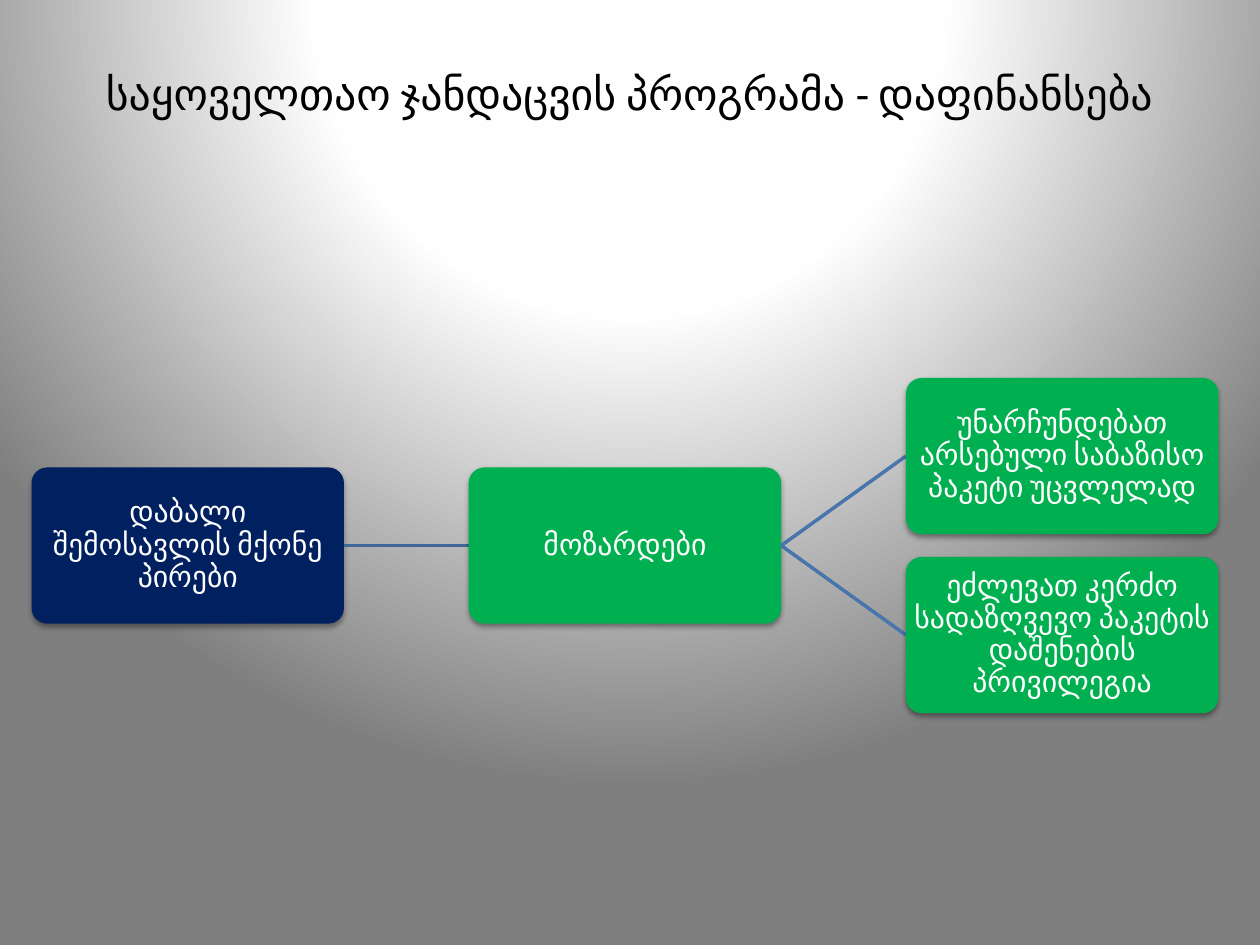
"""Build the slide on how the universal health programme is funded."""
from dataclasses import dataclass

from pptx import Presentation
from pptx.dml.color import RGBColor
from pptx.enum.shapes import MSO_CONNECTOR as Link, MSO_SHAPE as Preset
from pptx.enum.text import MSO_ANCHOR as Anchor, PP_ALIGN as Align
from pptx.oxml import parse_xml
from pptx.oxml.ns import nsdecls
from pptx.util import Inches, Pt

BLACK = RGBColor(0x00, 0x00, 0x00)
WHITE = RGBColor(0xFF, 0xFF, 0xFF)
NAVY = RGBColor(0x00, 0x20, 0x60)
GREEN = RGBColor(0x00, 0xB0, 0x50)
TRUNK_BLUE = RGBColor(0x3F, 0x67, 0x97)
BRANCH_BLUE = RGBColor(0x48, 0x75, 0xAC)
GLOW_STOPS = ((0, RGBColor(0xFF, 0xFF, 0xFF)),
              (40, RGBColor(0xFE, 0xFE, 0xFE)),
              (100, RGBColor(0x7F, 0x7F, 0x7F)))

BOX_WIDTH, BOX_HEIGHT = 2.48, 1.24
FIRST_LEFT, COLUMN_STEP = 0.25, 3.47
MIDDLE, BRANCH_OFFSET = 4.33, 0.71
BOX_MARGIN = Inches(0.01)
BOX_FRAME = {"word_wrap": True, "vertical_anchor": Anchor.MIDDLE,
             "margin_left": BOX_MARGIN, "margin_right": BOX_MARGIN,
             "margin_top": BOX_MARGIN, "margin_bottom": BOX_MARGIN}
TITLE_FRAME = {"word_wrap": True, "vertical_anchor": Anchor.MIDDLE}
BOX_PARA = {"alignment": Align.CENTER, "line_spacing": 0.9}
TITLE_PARA = {"alignment": Align.CENTER}


@dataclass(frozen=True)
class Node:
    """A rounded box of the tree, placed by column and vertical centre."""
    text: str
    column: int
    center: float
    fill: RGBColor
    shadow_alpha: int = 38
    shadow_distance: float = 1.6

    @property
    def left(self) -> float:
        return FIRST_LEFT + self.column * COLUMN_STEP

    @property
    def right(self) -> float:
        return self.left + BOX_WIDTH


def apply(target, values: dict) -> None:
    """Set every named attribute on the target."""
    for name, value in values.items():
        setattr(target, name, value)


def write(frame, text: str, size: float, color: RGBColor,
          frame_format: dict, para_format: dict) -> None:
    """Fill a text frame with one formatted paragraph."""
    apply(frame, frame_format)
    para = frame.paragraphs[0]
    apply(para, para_format)
    span = para.add_run()
    span.text = text
    apply(span.font, {"name": "Calibri", "size": Pt(size)})
    span.font.color.rgb = color


def paint_background(page) -> None:
    """Give the page a circular glow centred above its top edge."""
    stops = "".join(f'<a:gs pos="{place * 1000}"><a:srgbClr val="{color}"/></a:gs>'
                    for place, color in GLOW_STOPS)
    page.element.cSld.insert(0, parse_xml(
        f'<p:bg {nsdecls("p", "a")}><p:bgPr><a:gradFill rotWithShape="1">'
        f'<a:gsLst>{stops}</a:gsLst><a:path path="circle">'
        '<a:fillToRect l="50000" t="-80000" r="50000" b="180000"/></a:path>'
        '</a:gradFill><a:effectLst/></p:bgPr></p:bg>'))


def draw_title(page, text: str) -> None:
    """Write the centred heading."""
    box = page.shapes.add_textbox(Inches(0.5), Inches(0.3), Inches(9), Inches(0.87))
    write(box.text_frame, text, 25, BLACK, TITLE_FRAME, TITLE_PARA)


def draw_node(page, node: Node) -> None:
    """Draw a rounded box with its label and soft shadow."""
    box = page.shapes.add_shape(
        Preset.ROUNDED_RECTANGLE, Inches(node.left),
        Inches(node.center - BOX_HEIGHT / 2), Inches(BOX_WIDTH), Inches(BOX_HEIGHT))
    box.adjustments[0] = 0.1
    box.fill.solid()
    box.fill.fore_color.rgb = node.fill
    box.line.fill.background()
    box.shadow.inherit = False
    box.element.spPr.find("{*}effectLst").append(parse_xml(
        f'<a:outerShdw {nsdecls("a")} blurRad="{Pt(3.1)}" '
        f'dist="{Pt(node.shadow_distance)}" dir="5400000" rotWithShape="0">'
        f'<a:srgbClr val="{BLACK}"><a:alpha val="{node.shadow_alpha * 1000}"/>'
        '</a:srgbClr></a:outerShdw>'))
    write(box.text_frame, node.text, 17, WHITE, BOX_FRAME, BOX_PARA)


def draw_link(page, start: Node, end: Node, color: RGBColor) -> None:
    """Join the right side of one box to the left side of another."""
    link = page.shapes.add_connector(
        Link.STRAIGHT, Inches(start.right), Inches(start.center),
        Inches(end.left), Inches(end.center))
    link.line.width = Pt(2)
    link.line.color.rgb = color
    link.element.spPr.append(parse_xml(f'<a:effectLst {nsdecls("a")}/>'))


def main() -> None:
    """Assemble and save the deck."""
    deck = Presentation()
    apply(deck, {"slide_width": Inches(10), "slide_height": Inches(7.5)})
    page = deck.slides.add_slide(deck.slide_layouts[6])
    paint_background(page)
    draw_title(page, "საყოველთაო ჯანდაცვის პროგრამა - დაფინანსება")

    low_income = Node("დაბალი შემოსავლის მქონე პირები", 0, MIDDLE, NAVY, 35, 1.8)
    adults = Node("მოზარდები", 1, MIDDLE, GREEN)
    keep_package = Node("უნარჩუნდებათ არსებული საბაზისო პაკეტი უცვლელად",
                        2, MIDDLE - BRANCH_OFFSET, GREEN)
    private_package = Node("ეძლევათ კერძო სადაზღვევო პაკეტის დაშენების პრივილეგია",
                           2, MIDDLE + BRANCH_OFFSET, GREEN)

    draw_node(page, low_income)
    for start, end, color in ((low_income, adults, TRUNK_BLUE),
                              (adults, keep_package, BRANCH_BLUE),
                              (adults, private_package, BRANCH_BLUE)):
        draw_link(page, start, end, color)
        draw_node(page, end)
    deck.save("out.pptx")


if __name__ == "__main__":
    main()
